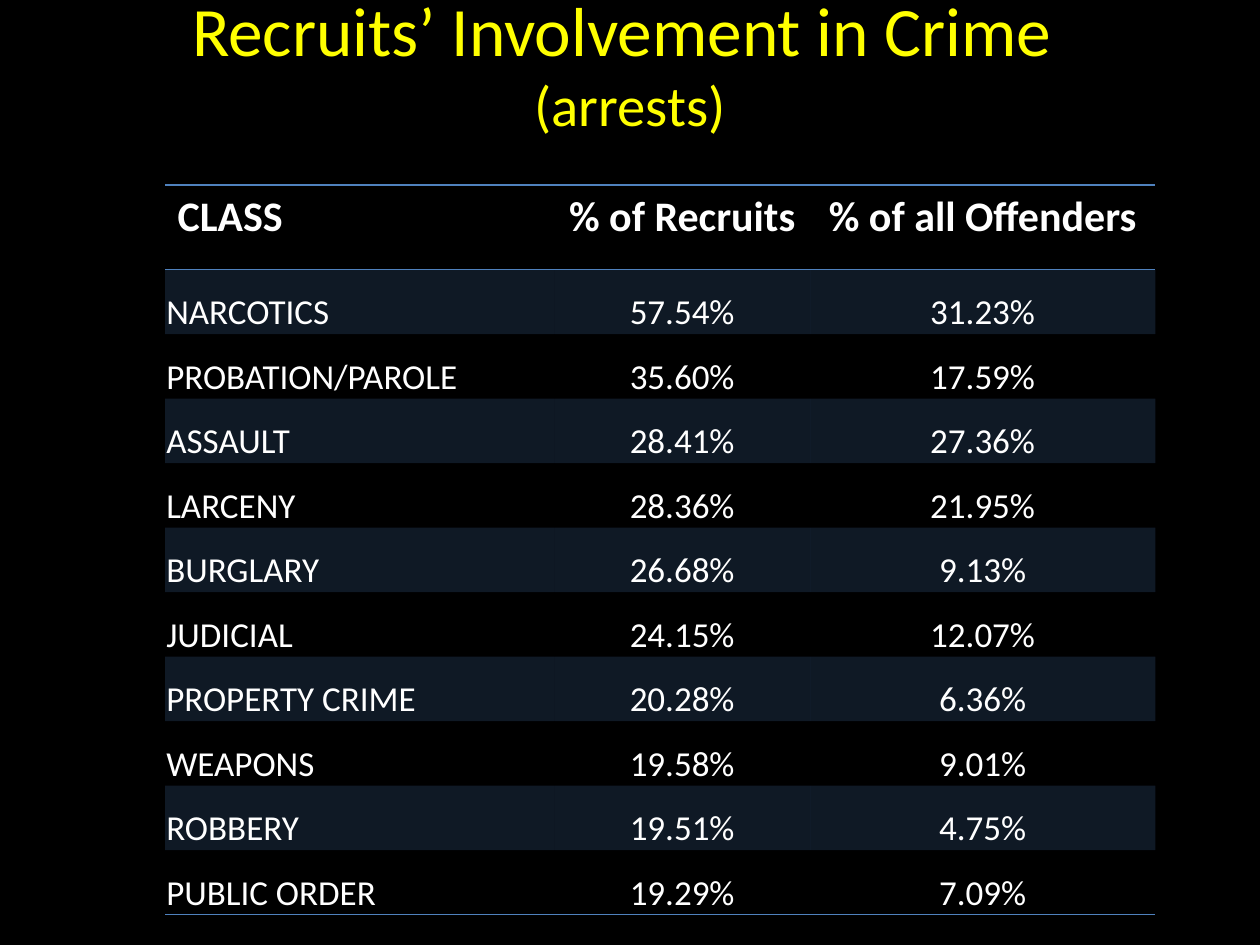
from lxml import etree
from pptx import Presentation
from pptx.dml.color import RGBColor
from pptx.enum import text
from pptx.oxml import ns
from pptx.util import Inches, Pt


def color(code):
    return RGBColor.from_string(code)


def rule(cell, side):
    line = etree.Element(ns.qn(f"a:ln{side}"), w=str(Pt(1)))
    fill = etree.SubElement(line, ns.qn("a:solidFill"))
    etree.SubElement(fill, ns.qn("a:srgbClr"), val=BLUE)
    cell._tc.get_or_add_tcPr().insert(0, line)


BLUE = "4F81BD"
PLAIN = "{2D5ABB26-0587-4C30-8999-92F81FD0307C}"
ROWS = [
    ("CLASS", "% of Recruits", "% of all Offenders"),
    ("NARCOTICS", "57.54%", "31.23%"),
    ("PROBATION/PAROLE", "35.60%", "17.59%"),
    ("ASSAULT", "28.41%", "27.36%"),
    ("LARCENY", "28.36%", "21.95%"),
    ("BURGLARY", "26.68%", "9.13%"),
    ("JUDICIAL", "24.15%", "12.07%"),
    ("PROPERTY CRIME", "20.28%", "6.36%"),
    ("WEAPONS", "19.58%", "9.01%"),
    ("ROBBERY", "19.51%", "4.75%"),
    ("PUBLIC ORDER", "19.29%", "7.09%"),
]
LAST = len(ROWS) - 1

deck = Presentation()
deck.slide_width, deck.slide_height = Inches(10), Inches(7.5)
slide = deck.slides.add_slide(deck.slide_layouts[6])
slide.background.fill.solid()
slide.background.fill.fore_color.rgb = color("000000")

title = slide.shapes.add_textbox(Inches(0.5), Inches(0.05), Inches(9), Inches(0.89))
frame = title.text_frame
frame.word_wrap = True
frame.vertical_anchor = text.MSO_ANCHOR.MIDDLE
para = frame.paragraphs[0]
para.alignment = text.PP_ALIGN.CENTER
para.font.name = "Calibri"
para.font.size = Pt(39.6)
para.font.color.rgb = color("FFFF00")
para.add_run().text = "Recruits’ Involvement in Crime "
para.add_line_break()
sub = para.add_run()
sub.text = "(arrests)"
sub.font.size = Pt(32.4)

grid = slide.shapes.add_table(
    len(ROWS), 3, Inches(1.31), Inches(1.47), Inches(7.86), Inches(5.79))
table = grid.table
table.first_row = table.horz_banding = False
table._tbl.tblPr.find(ns.qn("a:tableStyleId")).text = PLAIN
for col, width in zip(table.columns, (3.09, 2.03, 2.74)):
    col.width = Inches(width)

for r, row in enumerate(ROWS):
    head = r == 0
    table.rows[r].height = Inches(0.67 if head else (5.79 - 0.67) / LAST)
    for c, word in enumerate(row):
        cell = table.cell(r, c)
        cell.text = word
        para = cell.text_frame.paragraphs[0]
        para.alignment = text.PP_ALIGN.CENTER if c else text.PP_ALIGN.LEFT
        para.font.name = "Calibri"
        para.font.size = Pt(24 if head else 20)
        para.font.bold = head
        para.font.color.rgb = color("FFFFFF")
        if not head:
            cell.vertical_anchor = text.MSO_ANCHOR.BOTTOM
            cell.margin_left = cell.margin_right = cell.margin_top = Inches(0.01)
            cell.margin_bottom = 0
        if r % 2:
            cell.fill.solid()
            cell.fill.fore_color.rgb = color(BLUE)
            tint = cell._tc.tcPr.find(".//" + ns.qn("a:srgbClr"))
            etree.SubElement(tint, ns.qn("a:alpha"), val="20000")
        else:
            cell.fill.background()
        if r in (0, LAST):
            rule(cell, "B")
        if head:
            rule(cell, "T")

deck.save("out.pptx")
